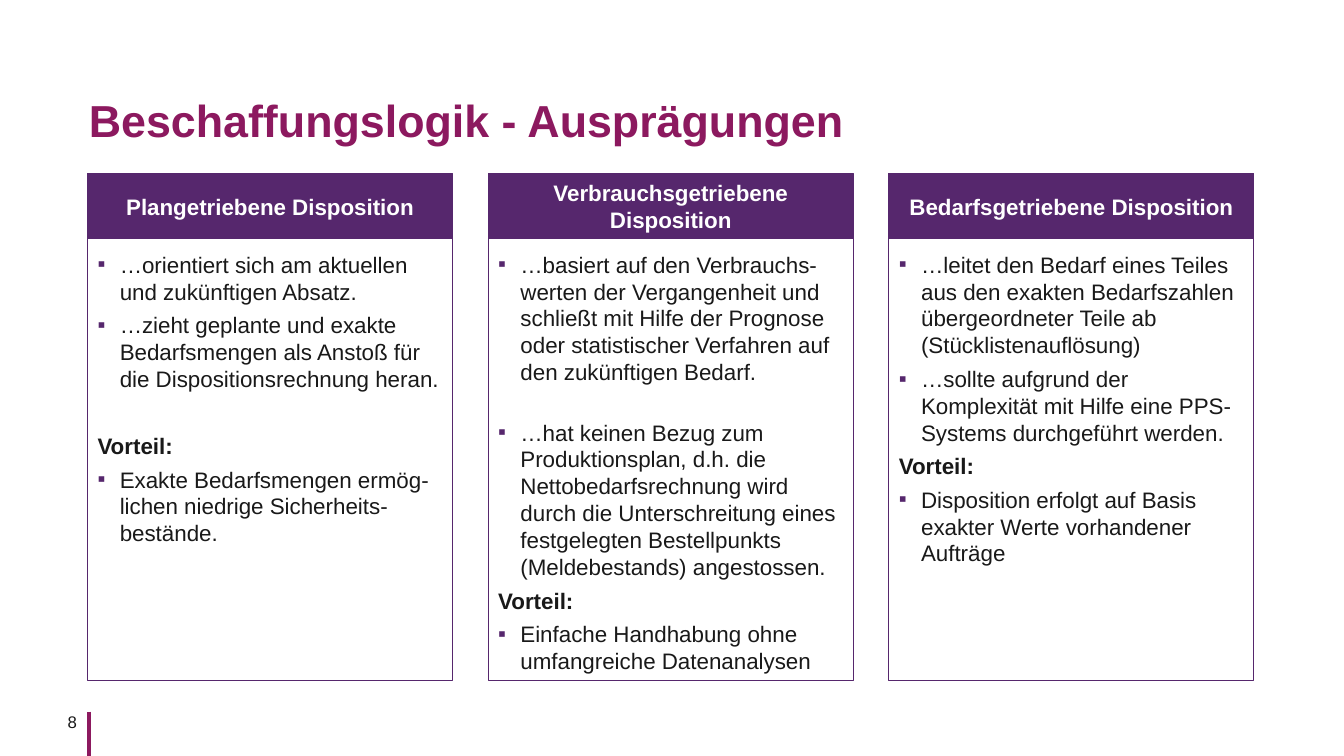
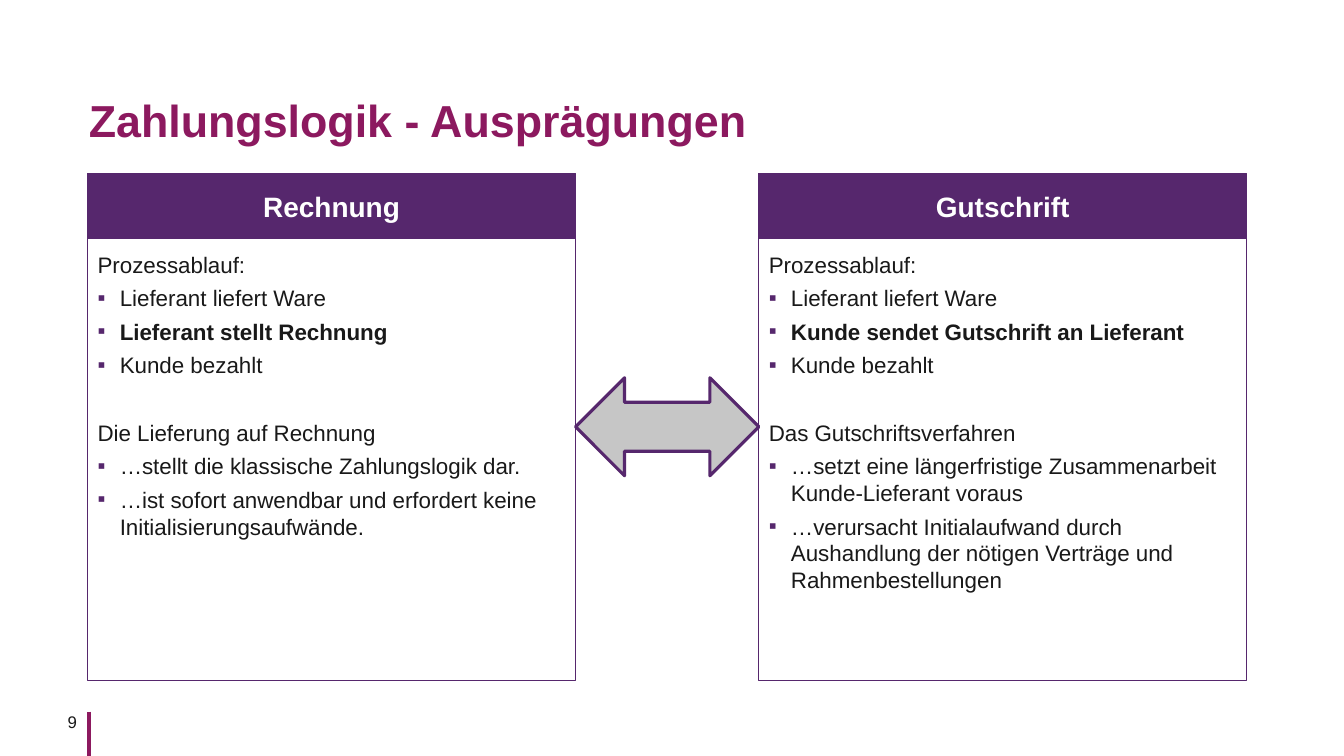
from dataclasses import dataclass

from lxml.etree import SubElement
from pptx import Presentation
from pptx.dml.color import RGBColor
from pptx.enum.shapes import MSO_CONNECTOR, MSO_SHAPE
from pptx.enum.text import MSO_ANCHOR, PP_ALIGN
from pptx.oxml.ns import qn
from pptx.util import Cm, Pt

COLOURS = {
    "title": "8C195F",
    "header": "56276D",
    "text": "191919",
    "arrow": "C6C6C6",
    "white": "FFFFFF",
}
FONT = "Arial"
LEFT, TOP = 2.21, 4.37
HEADER_HEIGHT, BODY_HEIGHT = 1.65, 11.12
ENTRY_GAP = 4.8  # points after each paragraph


@dataclass
class Entry:
    text: str
    bullet: bool = True
    bold: bool = False
    after: float = ENTRY_GAP


def colour(name):
    return RGBColor.from_string(COLOURS[name])


class DeckBuilder:
    """Holds the shared style and the current page."""

    def __init__(self):
        self.deck = Presentation()
        self.deck.slide_width, self.deck.slide_height = Cm(33.88), Cm(19.05)
        self.page = None

    def new_page(self, title, number):
        self.page = self.deck.slides.add_slide(self.deck.slide_layouts[6])
        # Footer: vertical bar and page number
        bar = self.page.shapes.add_connector(
            MSO_CONNECTOR.STRAIGHT, Cm(2.24), Cm(17.93), Cm(2.24), Cm(19.05))
        bar.line.color.rgb = colour("title")
        bar.line.width = Pt(3)
        SubElement(bar._element.spPr, qn("a:effectLst"))
        frame = self.text_box(0.74, 17.93, 1.5, 0.5)
        frame.margin_right = Cm(0.3)
        self.set_text(frame.paragraphs[0], str(number), 12, align=PP_ALIGN.RIGHT)
        # Title
        frame = self.text_box(2.24, 1.93, 30.7, 1.9)
        frame.vertical_anchor = MSO_ANCHOR.MIDDLE
        para = frame.paragraphs[0]
        para.line_spacing = 1.2
        self.set_text(para, title, 32, "title", bold=True)

    def text_box(self, left, top, width, height):
        box = self.page.shapes.add_textbox(Cm(left), Cm(top), Cm(width), Cm(height))
        frame = box.text_frame
        frame.word_wrap = True
        frame.margin_left = frame.margin_right = 0
        frame.margin_top = frame.margin_bottom = 0
        return frame

    def shape(self, kind, left, top, width, height, fill, line_width=0.75):
        shape = self.page.shapes.add_shape(
            kind, Cm(left), Cm(top), Cm(width), Cm(height))
        shape.shadow.inherit = False
        shape.fill.solid()
        shape.fill.fore_color.rgb = colour(fill)
        shape.line.color.rgb = colour("header")
        shape.line.width = Pt(line_width)
        return shape

    def set_text(self, para, text, size, ink="text", bold=False, align=PP_ALIGN.LEFT):
        para.text = text
        para.alignment = align
        font = para.font
        font.name, font.size, font.bold = FONT, Pt(size), bold
        font.color.rgb = colour(ink)

    def add_bullet(self, para):
        properties = para._p.get_or_add_pPr()
        properties.set("marL", str(Cm(0.56)))
        properties.set("indent", str(-Cm(0.56)))
        tint = SubElement(properties, qn("a:buClr"))
        SubElement(tint, qn("a:srgbClr"), val=COLOURS["header"])
        SubElement(properties, qn("a:buFont"), typeface=FONT)
        SubElement(properties, qn("a:buChar"), char="▪")

    def panel(self, left, width, heading, entries, heading_size):
        # Body
        body = self.shape(MSO_SHAPE.RECTANGLE, left, TOP + HEADER_HEIGHT,
                          width, BODY_HEIGHT, "white")
        frame = body.text_frame
        frame.word_wrap = True
        frame.vertical_anchor = MSO_ANCHOR.TOP
        frame.margin_top = Cm(0.3)
        for index, entry in enumerate(entries):
            para = frame.add_paragraph() if index else frame.paragraphs[0]
            if entry.bullet:
                self.add_bullet(para)
            para.space_after = Pt(entry.after)
            self.set_text(para, entry.text, 16, bold=entry.bold)
        # Header
        header = self.shape(MSO_SHAPE.RECTANGLE, left, TOP, width,
                            HEADER_HEIGHT, "header")
        frame = header.text_frame
        frame.word_wrap = True
        frame.vertical_anchor = MSO_ANCHOR.MIDDLE
        self.set_text(frame.paragraphs[0], heading, heading_size, "white",
                      bold=True, align=PP_ALIGN.CENTER)

    def panels(self, width, step, columns, heading_size):
        for index, (heading, entries) in enumerate(columns):
            self.panel(LEFT + index * step, width, heading, entries, heading_size)

    def double_arrow(self, left, top, width, height):
        self.shape(MSO_SHAPE.LEFT_RIGHT_ARROW, left, top, width, height, "arrow", 2.25)


ADVANTAGE = Entry("Vorteil:", bullet=False, bold=True)
SECTION_GAP = 28.8

PROCUREMENT = [
    ("Plangetriebene Disposition", [
        Entry("…orientiert sich am aktuellen und zukünftigen Absatz."),
        Entry("…zieht geplante und exakte Bedarfsmengen als Anstoß für die "
              "Dispositionsrechnung heran.", after=SECTION_GAP),
        ADVANTAGE,
        Entry("Exakte Bedarfsmengen ermög-lichen niedrige Sicherheits-bestände."),
    ]),
    ("Verbrauchsgetriebene Disposition", [
        Entry("…basiert auf den Verbrauchs-werten der Vergangenheit und schließt "
              "mit Hilfe der Prognose oder statistischer Verfahren auf den "
              "zukünftigen Bedarf.", after=24),
        Entry("…hat keinen Bezug zum Produktionsplan, d.h. die "
              "Nettobedarfsrechnung wird durch die Unterschreitung eines "
              "festgelegten Bestellpunkts (Meldebestands) angestossen."),
        ADVANTAGE,
        Entry("Einfache Handhabung ohne umfangreiche Datenanalysen"),
    ]),
    ("Bedarfsgetriebene Disposition", [
        Entry("…leitet den Bedarf eines Teiles aus den exakten Bedarfszahlen "
              "übergeordneter Teile ab\v(Stücklistenauflösung)"),
        Entry("…sollte aufgrund der Komplexität mit Hilfe eine PPS-Systems "
              "durchgeführt werden."),
        ADVANTAGE,
        Entry("Disposition erfolgt auf Basis exakter Werte vorhandener Aufträge"),
    ]),
]


def payment(key_step, subject, traits):
    """Process steps followed by the traits of one payment method."""
    return [
        Entry("Prozessablauf:", bullet=False),
        Entry("Lieferant liefert Ware"),
        Entry(key_step, bold=True),
        Entry("Kunde bezahlt", after=SECTION_GAP),
        Entry(subject, bullet=False),
        *map(Entry, traits),
    ]


PAYMENT = [
    ("Rechnung", payment(
        "Lieferant stellt Rechnung", "Die Lieferung auf Rechnung",
        ["…stellt die klassische Zahlungslogik dar.",
         "…ist sofort anwendbar und erfordert keine Initialisierungsaufwände."])),
    ("Gutschrift", payment(
        "Kunde sendet Gutschrift an Lieferant", "Das Gutschriftsverfahren",
        ["…setzt eine längerfristige Zusammenarbeit Kunde-Lieferant voraus",
         "…verursacht Initialaufwand durch Aushandlung der nötigen Verträge "
         "und Rahmenbestellungen"])),
]


def main():
    builder = DeckBuilder()

    # Procurement: three columns
    builder.new_page("Beschaffungslogik - Ausprägungen", 8)
    builder.panels(9.2, 10.1, PROCUREMENT, 16)

    # Payment: two columns joined by an arrow
    width, step = 12.3, 16.92
    builder.new_page("Zahlungslogik - Ausprägungen", 9)
    builder.panels(width, step, PAYMENT, 20)
    builder.double_arrow(LEFT + width, 9.52, step - width, 2.47)

    builder.deck.save("out.pptx")


if __name__ == "__main__":
    main()
